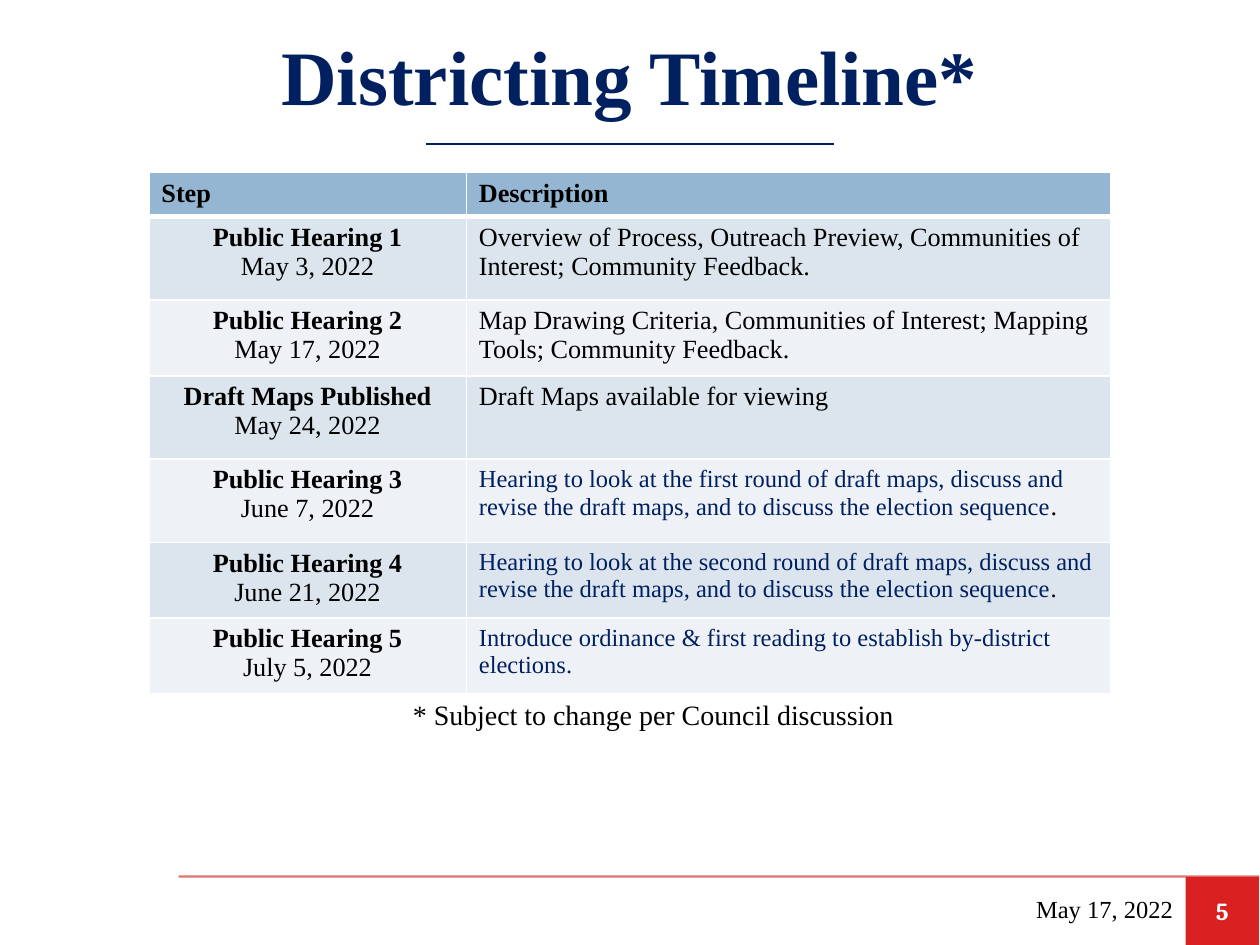
from lxml import etree
from pptx import Presentation
from pptx import util as u
from pptx.dml.color import RGBColor
from pptx.enum import shapes, text
from pptx.oxml.ns import qn

COLORS = {
    "navy": "002060", "black": "000000", "white": "FFFFFF",
    "header": "94B6D2", "band_dark": "DCE5EE", "band_light": "EEF2F7",
    "red": "D92121", "rule": "C80000",
}
SERIF = "Times New Roman"
BODY = {"size": 15, "color": "black"}
NAVY_BODY = {"size": 14, "color": "navy"}
LEFT, CENTER, RIGHT = text.PP_ALIGN.LEFT, text.PP_ALIGN.CENTER, text.PP_ALIGN.RIGHT

# Content: step, date, description runs, row height in cm
HEADER = ("Step", "Description")
HEADER_HEIGHT = 0.69
STEPS = [
    ("Public Hearing 1", "May 3, 2022",
     [("Overview of Process, Outreach Preview, Communities of Interest; "
       "Community Feedback.", BODY)], 1.68),
    ("Public Hearing 2", "May 17, 2022",
     [("Map Drawing Criteria, Communities of Interest; Mapping Tools; "
       "Community Feedback.", BODY)], 1.19),
    ("Draft Maps Published", "May 24, 2022",
     [("Draft Maps available for viewing", BODY)], 1.68),
    ("Public Hearing 3", "June 7, 2022",
     [("Hearing to look at the first round of draft maps, discuss and revise "
       "the draft maps, and to discuss the election sequence", NAVY_BODY),
      (".", BODY)], 1.68),
    ("Public Hearing 4", "June 21, 2022",
     [("Hearing to look at the second round of draft maps, discuss and revise "
       "the draft maps, and to discuss the election sequence", NAVY_BODY),
      (".", {"size": 14, "color": "black"})], 1.19),
    ("Public Hearing 5", "July 5, 2022",
     [("Introduce ordinance & first reading to establish by-district "
       "elections.", NAVY_BODY)], 1.19),
]
COLUMN_WIDTHS = (6.4, 13)

# Text boxes: wording, box in cm, alignment, anchor, format
MIDDLE, TOP = text.MSO_ANCHOR.MIDDLE, text.MSO_ANCHOR.TOP
TEXT_BOXES = [
    ("Districting Timeline*", (0, 0.23, 25.4, 2.54), CENTER, MIDDLE,
     {"size": 44, "color": "navy", "bold": True}),
    ("May 17, 2022", (16.48, 17.81, 7.42, 1.02), RIGHT, MIDDLE,
     {"size": 14, "color": "black"}),
    ("* Subject to change per Council discussion", (2.44, 13.94, 21.46, 0.94),
     CENTER, TOP, {"size": 16, "color": "black"}),
]


def rgb(name):
    return RGBColor.from_string(COLORS[name])


def add_run(paragraph, wording, size, color, bold=False, name=SERIF):
    run = paragraph.add_run()
    run.text = wording
    values = {"size": u.Pt(size), "bold": bold, "name": name}
    for attribute, value in values.items():
        setattr(run.font, attribute, value)
    run.font.color.rgb = rgb(color)


def write(frame, paragraphs, alignment):
    """Each paragraph is a list of (wording, format) runs."""
    for index, runs in enumerate(paragraphs):
        paragraph = frame.add_paragraph() if index else frame.paragraphs[0]
        paragraph.alignment = alignment
        for wording, style in runs:
            add_run(paragraph, wording, **style)


def add_rule(slide, start, end, y, color, width, alpha=None):
    line = slide.shapes.add_connector(
        shapes.MSO_CONNECTOR.STRAIGHT, u.Cm(start), u.Cm(y), u.Cm(end), u.Cm(y))
    line.line.color.rgb = rgb(color)
    line.line.width = u.Pt(width)
    properties = line._element.spPr
    if alpha:
        tone = next(properties.iter(qn("a:srgbClr")))
        etree.SubElement(tone, qn("a:alpha"), val=str(alpha * 1000))
    etree.SubElement(properties, qn("a:effectLst"))


def format_cell(cell, fill, top=1, bottom=1):
    properties = cell._tc.get_or_add_tcPr()
    for side, width in (("L", 1), ("R", 1), ("T", top), ("B", bottom)):
        border = etree.SubElement(properties, qn("a:ln" + side), w=str(u.Pt(width)))
        paint = etree.SubElement(border, qn("a:solidFill"))
        etree.SubElement(paint, qn("a:srgbClr"), val=COLORS["white"])
    cell.fill.solid()
    cell.fill.fore_color.rgb = rgb(fill)


def add_timeline(slide):
    heights = [HEADER_HEIGHT] + [step[-1] for step in STEPS]
    table = slide.shapes.add_table(
        len(heights), 2, u.Cm(3), u.Cm(3.48),
        u.Cm(sum(COLUMN_WIDTHS)), u.Cm(sum(heights))).table
    for column, width in zip(table.columns, COLUMN_WIDTHS):
        column.width = u.Cm(width)
    for row, height in zip(table.rows, heights):
        row.height = u.Cm(height)

    bold = {**BODY, "bold": True}
    for column, heading in enumerate(HEADER):
        cell = table.cell(0, column)
        format_cell(cell, "header", bottom=3)
        write(cell.text_frame, [[(heading, bold)]], LEFT)

    for row, (step, date, description, _) in enumerate(STEPS, 1):
        fill = "band_dark" if row % 2 else "band_light"
        contents = (([[(step, bold)], [(date, BODY)]], CENTER),
                    ([description], LEFT))
        for column, (paragraphs, alignment) in enumerate(contents):
            cell = table.cell(row, column)
            format_cell(cell, fill, top=3 if row == 1 else 1)
            write(cell.text_frame, paragraphs, alignment)


def main():
    presentation = Presentation()
    presentation.slide_width, presentation.slide_height = u.Cm(25.4), u.Cm(19.05)
    slide = presentation.slides.add_slide(presentation.slide_layouts[6])

    # Footer rule and page number
    add_rule(slide, 3.6, 25.38, 17.67, "rule", 1.25, alpha=55)
    badge = slide.shapes.add_shape(
        shapes.MSO_SHAPE.RECTANGLE, u.Cm(23.9), u.Cm(17.68), u.Cm(1.48), u.Cm(1.37))
    badge.shadow.inherit = False
    badge.fill.solid()
    badge.fill.fore_color.rgb = rgb("red")
    badge.line.fill.background()
    badge.text_frame.vertical_anchor = MIDDLE
    number_style = {"size": 14, "color": "white", "bold": True, "name": "Cambria"}
    write(badge.text_frame, [[("5", number_style)]], CENTER)

    # Title, date and footnote
    for wording, box, alignment, anchor, style in TEXT_BOXES:
        frame = slide.shapes.add_textbox(*map(u.Cm, box)).text_frame
        frame.word_wrap = True
        frame.vertical_anchor = anchor
        write(frame, [[(wording, style)]], alignment)

    # Title rule and timeline table
    add_rule(slide, 8.59, 16.81, 2.9, "navy", 0.75)
    add_timeline(slide)
    presentation.save("out.pptx")


if __name__ == "__main__":
    main()
